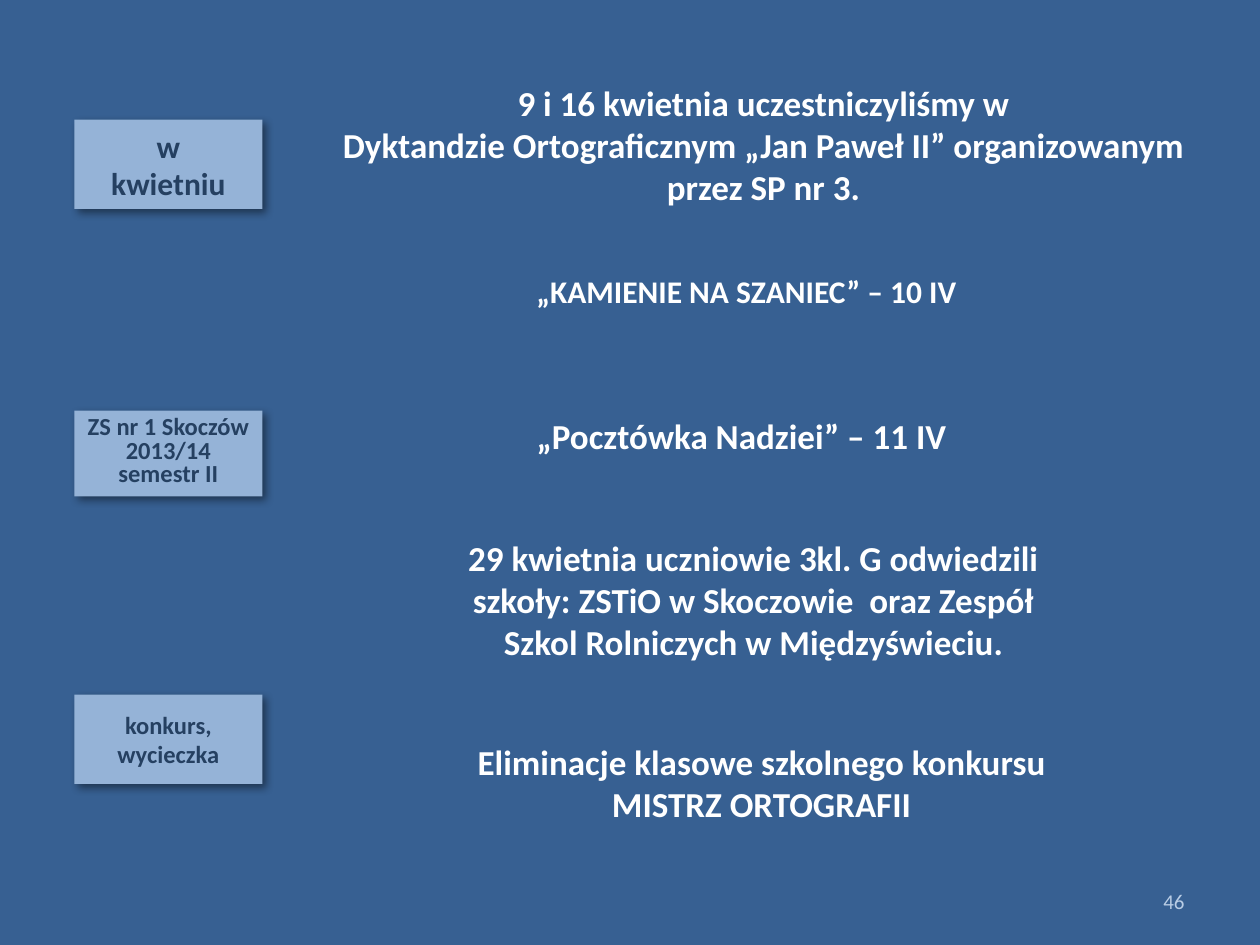
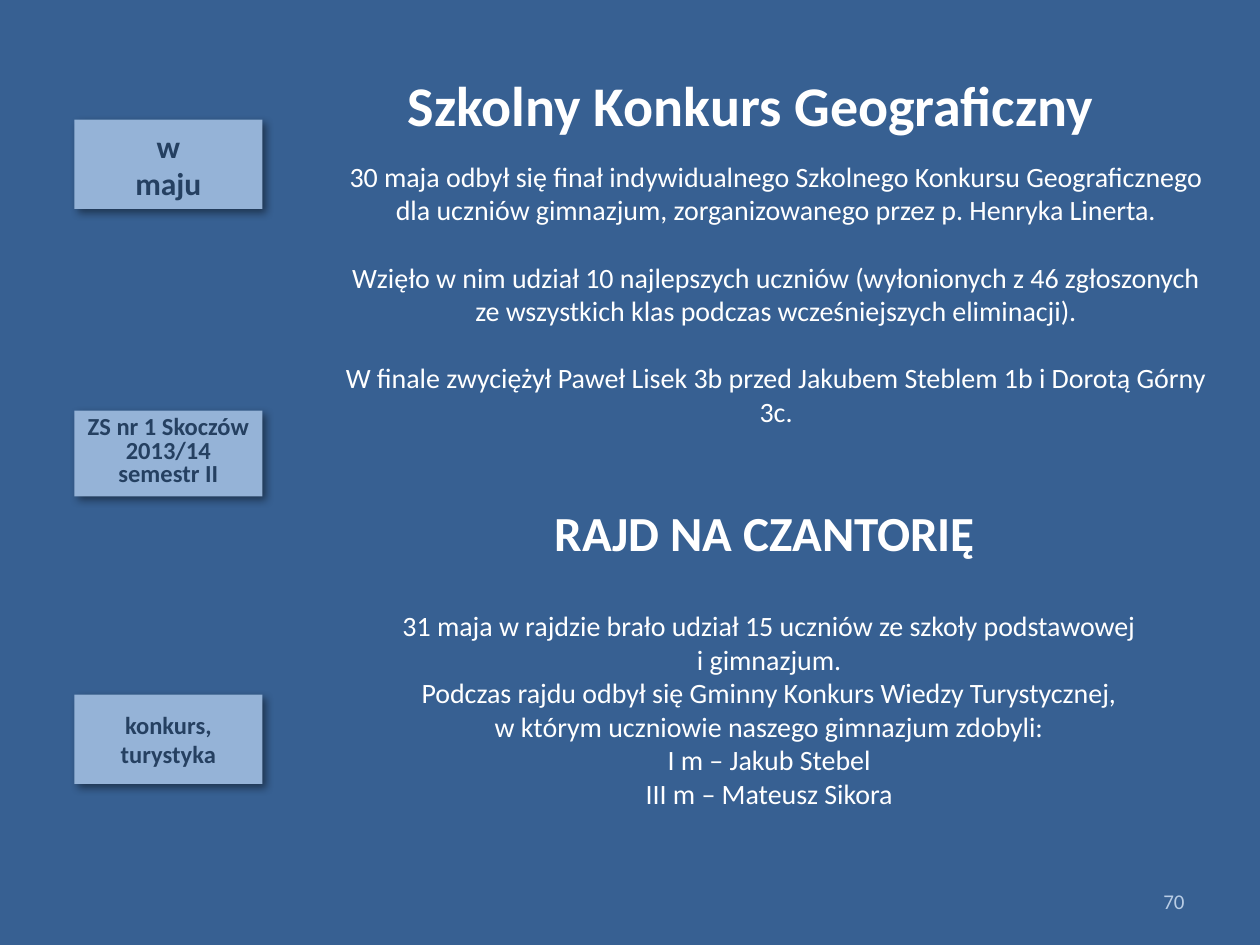
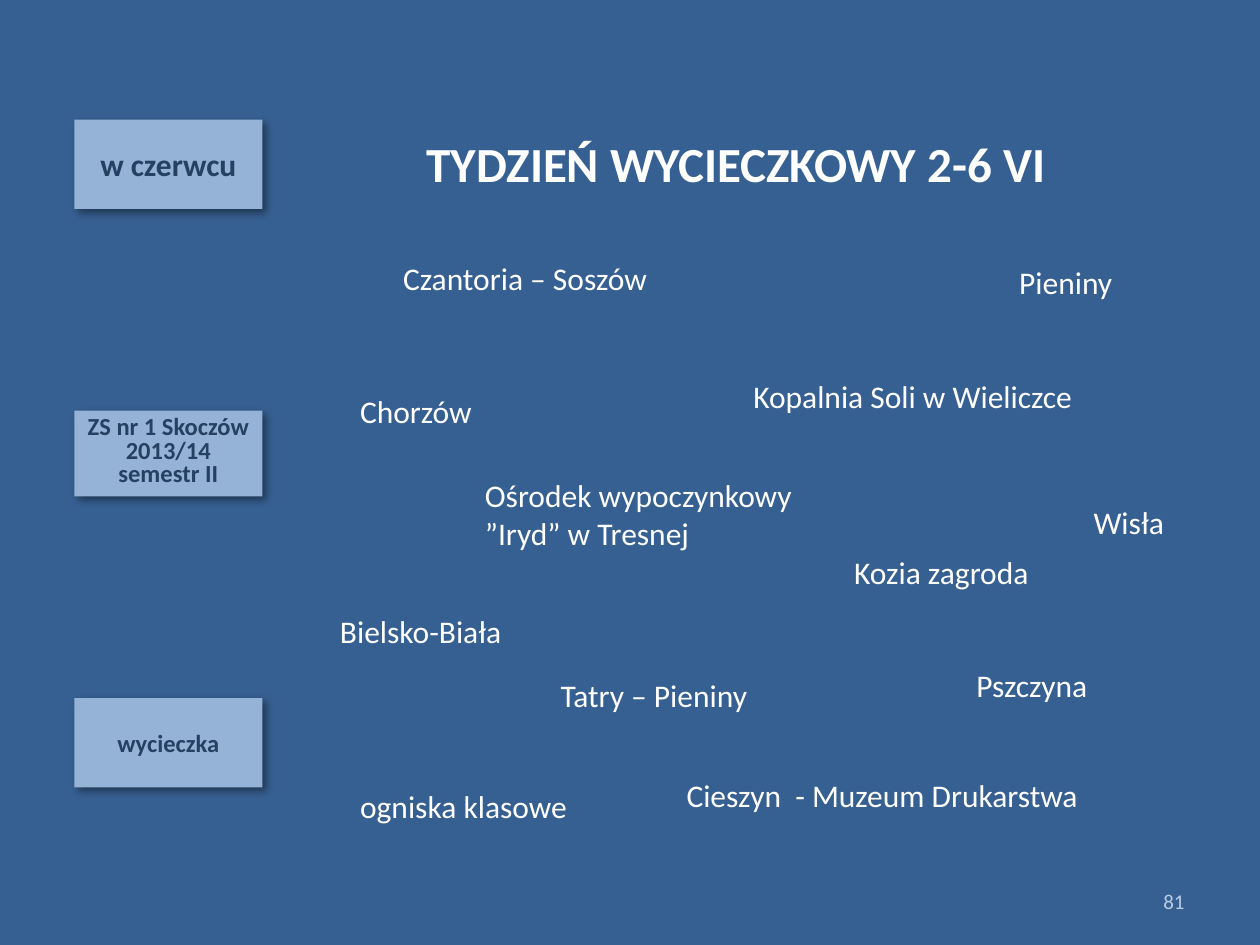
from lxml.etree import SubElement
from pptx import Presentation
from pptx.dml.color import RGBColor
from pptx.enum.shapes import MSO_SHAPE
from pptx.enum.text import MSO_ANCHOR, MSO_AUTO_SIZE, PP_ALIGN
from pptx.oxml.ns import qn
from pptx.util import Pt

COLORS = {
    "background": "376092",
    "label": "95B3D7",
    "label_text": "254061",
    "text": "FFFFFF",
    "number": "B9CDE5",
}
FONT = "Calibri"
SIDEBAR = (42.5, 68.4, 107.5, 379.5)
CONTENT = (172.8, 26.6, 527, 450)
FOOTER = (516, 500.4, 168, 28.8)


def rgb(name):
    return RGBColor.from_string(COLORS[name])


def write(shape, lines, size, color="text", bold=False, align=PP_ALIGN.CENTER,
          anchor=MSO_ANCHOR.MIDDLE, wrap=True, spacing=None, gap=0):
    frame = shape.text_frame
    frame.word_wrap = wrap
    frame.vertical_anchor = anchor
    for index, line in enumerate(lines):
        paragraph = frame.add_paragraph() if index else frame.paragraphs[0]
        paragraph.text = line
        paragraph.alignment = align
        if spacing:
            paragraph.line_spacing = spacing
        if index and gap:
            paragraph.space_before = Pt(gap)
        font = paragraph.font
        font.name, font.size, font.bold = FONT, Pt(size), bold
        font.color.rgb = rgb(color)


def add_text(slide, box, lines, size, grow=True, **style):
    note = slide.shapes.add_textbox(*map(Pt, box))
    write(note, lines, size, **style)
    if grow:
        note.text_frame.auto_size = MSO_AUTO_SIZE.SHAPE_TO_FIT_TEXT


def add_panel(slide, box, fill, lines, size, **style):
    panel = slide.shapes.add_shape(MSO_SHAPE.RECTANGLE, *map(Pt, box))
    panel.shadow.inherit = False
    panel.fill.solid()
    panel.fill.fore_color.rgb = rgb(fill)
    panel.line.fill.background()
    write(panel, lines, size, bold=True, **style)
    return panel


def add_label(slide, box, lines, size, **style):
    label = add_panel(slide, box, "label", lines, size, color="label_text", **style)
    effects = label._element.spPr.find(qn("a:effectLst"))
    shadow = SubElement(effects, qn("a:outerShdw"), blurRad=str(Pt(5)),
                        dist=str(Pt(3)), dir="2700000", algn="tl", rotWithShape="0")
    black = SubElement(shadow, qn("a:srgbClr"), val="000000")
    SubElement(black, qn("a:alpha"), val="43000")


def add_sidebar(slide, box, month, activity):
    left, top, width, height = box
    label_height = 51
    add_label(slide, (left, top, width, label_height), month, 18)
    add_label(slide, (left, top + height - label_height, width, label_height), [activity], 14)
    add_label(slide, (left, top + 166.3, width, 49), ["ZS nr 1 Skoczów 2013/14", "semestr II"],
              14, anchor=MSO_ANCHOR.TOP, spacing=0.8)


def add_april(slide, box):
    left, top, _, _ = box
    add_panel(slide, (left + 15.8, top, 495.4, 112.4), "background",
              ["9 i 16 kwietnia uczestniczyliśmy w",
               "Dyktandzie Ortograficznym „Jan Paweł II” organizowanym przez SP nr 3."], 20)
    events = [
        (125.3, 125.3, 257, 28.8, 18, False, ["„KAMIENIE NA SZANIEC” – 10 IV"]),
        (125.3, 206.7, 251.3, 31.7, 20, False, ["„Pocztówka Nadziei” – 11 IV"]),
        (77.8, 276.5, 360, 80, 20, True,
         ["29 kwietnia uczniowie 3kl. G odwiedzili szkoły: ZSTiO w Skoczowie  oraz "
          "Zespół Szkol Rolniczych w Międzyświeciu."]),
        (56.9, 393.1, 411, 55.4, 20, True,
         ["Eliminacje klasowe szkolnego konkursu", "MISTRZ ORTOGRAFII"]),
    ]
    for x, y, width, height, size, wrap, lines in events:
        add_text(slide, (left + x, top + y, width, height), lines, size,
                 bold=True, anchor=MSO_ANCHOR.TOP, wrap=wrap)


def add_may(slide, box):
    left, top, width, _ = box
    add_text(slide, (left + 1.4, top + 10.1, 509.8, 46), ["Szkolny Konkurs Geograficzny"],
             32, bold=True, anchor=MSO_ANCHOR.TOP)
    add_text(slide, (left + 17.3, top + 55.5, 506.9, 171.4),
             ["30 maja odbył się finał indywidualnego Szkolnego Konkursu Geograficznego "
              "dla uczniów gimnazjum, zorganizowanego przez p. Henryka Linerta.",
              "Wzięło w nim udział 10 najlepszych uczniów (wyłonionych z 46 zgłoszonych "
              "ze wszystkich klas podczas wcześniejszych eliminacji).",
              "W finale zwyciężył Paweł Lisek 3b przed Jakubem Steblem 1b i Dorotą Górny 3c."],
             16, grow=False, gap=19.2)
    add_panel(slide, (left + 1.4, top + 252, width - 1.4, 51), "background",
              ["RAJD NA CZANTORIĘ"], 28)
    add_text(slide, (left + 6.5, top + 316.8, width - 6.5, 123.8),
             ["31 maja w rajdzie brało udział 15 uczniów ze szkoły podstawowej",
              "i gimnazjum.",
              "Podczas rajdu odbył się Gminny Konkurs Wiedzy Turystycznej,",
              "w którym uczniowie naszego gimnazjum zdobyli:",
              "I m – Jakub Stebel",
              "III m – Mateusz Sikora"], 16)


def add_june(slide, box):
    left, top, _, _ = box
    add_panel(slide, (left, top + 30.3, 495.4, 72.7), "background",
              ["TYDZIEŃ WYCIECZKOWY 2-6 VI"], 28)
    trips = [
        (50.4, 118.1, 157, "Czantoria – Soszów"),
        (250.6, 185.1, 199.4, "Kopalnia Soli w Wieliczce"),
        (308.2, 285.9, 116.6, "Kozia zagroda"),
        (378, 350.7, 79.9, "Pszczyna"),
        (445, 257.1, 55.4, "Wisła"),
        (140.4, 356.4, 123.8, "Tatry – Pieniny"),
        (402.5, 120.3, 68.4, "Pieniny"),
        (14.4, 319.7, 108, "Bielsko-Biała"),
        (25.9, 193.7, 79.2, "Chorzów"),
        (212.4, 413.3, 250.6, "Cieszyn  - Muzeum Drukarstwa"),
        (25.9, 419.8, 134.6, "ogniska klasowe"),
    ]
    style = dict(align=PP_ALIGN.LEFT, anchor=MSO_ANCHOR.TOP)
    for x, y, width, trip in trips:
        add_text(slide, (left + x, top + y, width, 28.8), [trip], 18, wrap=False, **style)
    add_text(slide, (left + 97.2, top + 242, 210.2, 51),
             ["Ośrodek wypoczynkowy ”Iryd” w Tresnej"], 18, **style)


def add_month(deck, month, activity, number, add_content, sidebar=SIDEBAR):
    slide = deck.slides.add_slide(deck.slide_layouts[6])
    slide.background.fill.solid()
    slide.background.fill.fore_color.rgb = rgb("background")
    add_sidebar(slide, sidebar, month, activity)
    add_content(slide, CONTENT)
    add_text(slide, FOOTER, [number], 12, grow=False, color="number", align=PP_ALIGN.RIGHT)


def main():
    deck = Presentation()
    deck.slide_width, deck.slide_height = Pt(720), Pt(540)
    add_month(deck, ["w", "kwietniu"], "konkurs, wycieczka", "46", add_april)
    add_month(deck, ["w", "maju"], "konkurs, turystyka", "70", add_may)
    add_month(deck, ["w czerwcu"], "wycieczka", "81", add_june,
              sidebar=(*SIDEBAR[:3], 381.5))
    deck.save("out.pptx")


if __name__ == "__main__":
    main()
